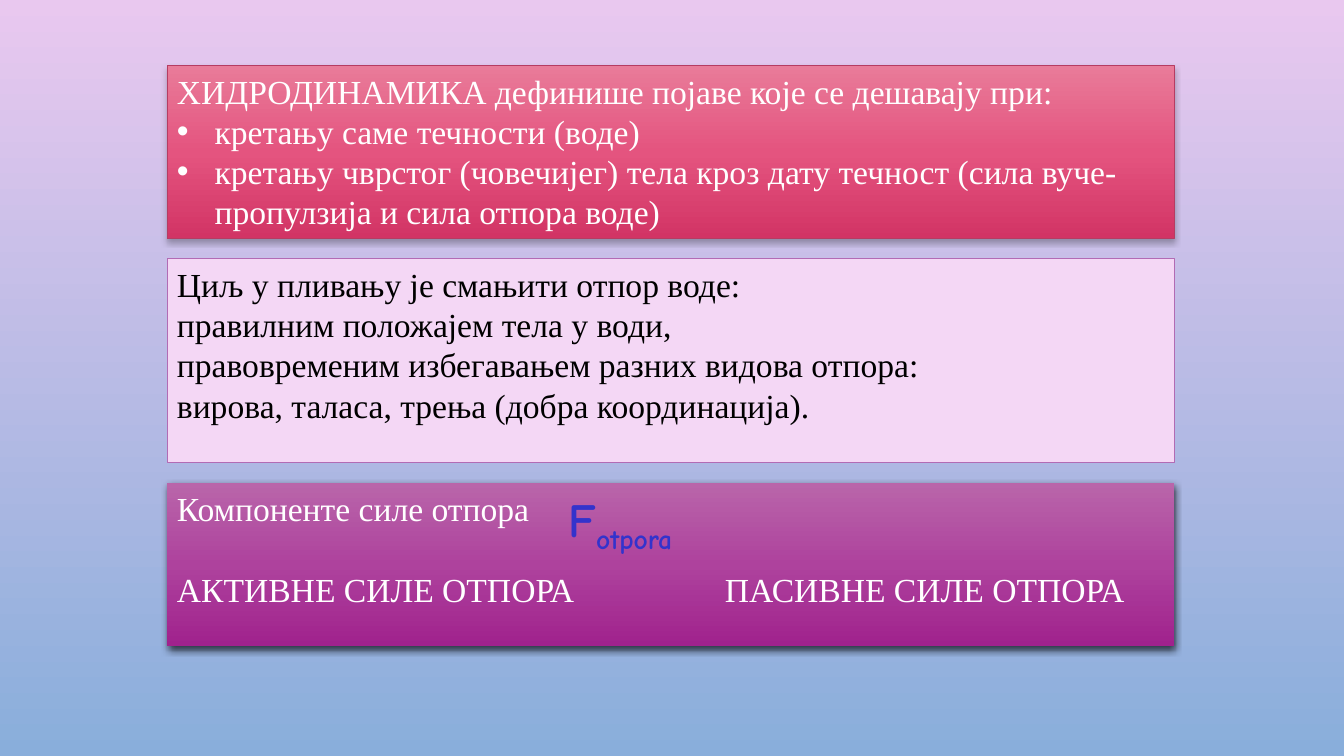
import pptx
import pptx.dml.color
import pptx.enum.shapes
import pptx.enum.text
import pptx.oxml
import pptx.oxml.ns
import pptx.util

Cm = pptx.util.Cm
Pt = pptx.util.Pt
NS = pptx.oxml.ns.nsdecls("a")


def color(hex_code):
    return pptx.dml.color.RGBColor.from_string(hex_code)


def add_text(paragraph, text, font="Times New Roman", size=24, ink="FFFFFF",
             bold=False, baseline=None):
    run = paragraph.add_run()
    run.text = text
    run.font.name = font
    run.font.size = Pt(size)
    run.font.bold = bold
    run.font.color.rgb = color(ink)
    if baseline is not None:
        run.font._element.set("baseline", str(baseline * 1000))


class Page:
    """Holds the slide and the shared style of its panels."""

    LEFT, WIDTH = Cm(4.21), Cm(25.38)
    LINE_PITCH = Pt(28.8)
    BULLET_INDENT = Cm(0.95)

    def __init__(self, slide):
        self.slide = slide

    def gradient(self, owner, fill, stops):
        """Fill top to bottom with evenly spaced colour stops."""
        fill.gradient()
        old = owner.element.xpath(".//a:gradFill")[0]
        step = 100000 // (len(stops) - 1)
        marks = "".join(
            f'<a:gs pos="{i * step}"><a:srgbClr val="{stop}"/></a:gs>'
            for i, stop in enumerate(stops))
        old.getparent().replace(old, pptx.oxml.parse_xml(
            f'<a:gradFill {NS} rotWithShape="1"><a:gsLst>{marks}</a:gsLst>'
            '<a:lin ang="5400000" scaled="0"/></a:gradFill>'))

    def background(self, stops):
        self.gradient(self.slide, self.slide.background.fill, stops)

    def shadow(self, shape, alpha, blur):
        effects = shape.element.spPr.find(pptx.oxml.ns.qn("a:effectLst"))
        effects.append(pptx.oxml.parse_xml(
            f'<a:outerShdw {NS} blurRad="{Pt(blur)}" dist="{Pt(2)}" '
            'dir="5400000" algn="ctr" rotWithShape="0"><a:srgbClr val="000000">'
            f'<a:alpha val="{alpha * 1000}"/></a:srgbClr></a:outerShdw>'))

    def panel(self, top, height, stops, line=None, shadow=None):
        shape = self.slide.shapes.add_shape(
            pptx.enum.shapes.MSO_SHAPE.RECTANGLE,
            self.LEFT, Cm(top), self.WIDTH, Cm(height))
        shape.shadow.inherit = False
        if len(stops) > 1:
            self.gradient(shape, shape.fill, stops)
        else:
            shape.fill.solid()
            shape.fill.fore_color.rgb = color(stops[0])
        if line:
            shape.line.color.rgb = color(line)
            shape.line.width = Pt(0.75)
        else:
            shape.line.fill.background()
        if shadow:
            self.shadow(shape, *shadow)
        shape.text_frame.word_wrap = True
        shape.text_frame.vertical_anchor = pptx.enum.text.MSO_ANCHOR.TOP
        return shape.text_frame

    def add_lines(self, frame, lines, ink="FFFFFF", bullets_from=None, tab=None, gap=0):
        for i, line in enumerate(lines):
            paragraph = frame.paragraphs[0] if i == 0 else frame.add_paragraph()
            props = paragraph._p.get_or_add_pPr()
            if bullets_from is not None and i >= bullets_from:
                props.set("marL", str(self.BULLET_INDENT))
                props.set("indent", str(-self.BULLET_INDENT))
                props.append(pptx.oxml.parse_xml(
                    f'<a:buFont {NS} typeface="Arial"/>'))
                props.append(pptx.oxml.parse_xml(f'<a:buChar {NS} char="•"/>'))
            if tab:
                props.append(pptx.oxml.parse_xml(
                    f'<a:tabLst {NS}><a:tab pos="{Cm(tab)}" algn="l"/></a:tabLst>'))
            paragraph.alignment = pptx.enum.text.PP_ALIGN.LEFT
            paragraph.line_spacing = self.LINE_PITCH
            if i and gap:
                paragraph.space_before = gap
            add_text(paragraph, line, ink=ink)

    def force_symbol(self, left, top, width, height, symbol, index):
        frame = self.slide.shapes.add_textbox(
            Cm(left), Cm(top), Cm(width), Cm(height)).text_frame
        frame.word_wrap = True
        paragraph = frame.paragraphs[0]
        paragraph.alignment = pptx.enum.text.PP_ALIGN.CENTER
        style = dict(font="Comic Neue", size=34, ink="3333CC", bold=True)
        add_text(paragraph, symbol, **style)
        add_text(paragraph, index, baseline=-25, **style)


def main():
    deck = pptx.Presentation()
    deck.slide_width, deck.slide_height = Cm(33.87), Cm(19.05)
    page = Page(deck.slides.add_slide(deck.slide_layouts[6]))
    page.background(["E9C8EF", "89AEDB"])

    # Definition of hydrodynamics
    definition = page.panel(1.65, 4.37, ["E97B99", "E4547F", "D23465"],
                            line="B63C62", shadow=(28, 4))
    page.add_lines(definition, [
        "ХИДРОДИНАМИКА дефинише појаве које се дешавају при:",
        "кретању саме течности (воде)",
        "кретању чврстог (човечијег) тела кроз дату течност "
        "(сила вуче- пропулзија и сила отпора воде)",
    ], bullets_from=1)

    # Goal in swimming
    goal = page.panel(6.52, 5.13, ["F4D7F5"], line="B26BB4")
    page.add_lines(goal, [
        "Циљ у пливању је смањити отпор воде:",
        "правилним положајем тела у води,",
        "правовременим избегавањем разних видова отпора:",
        "вирова, таласа, трења (добра координација).",
    ], ink="000000")

    # Components of the drag force
    components = page.panel(12.18, 4.11, ["B965AA", "AE429D", "A0228D"],
                            shadow=(69, 5))
    page.add_lines(components, [
        "Компоненте силе отпора",
        "АКТИВНЕ СИЛЕ ОТПОРА\tПАСИВНЕ СИЛЕ ОТПОРА",
    ], tab=13.81, gap=page.LINE_PITCH)
    page.force_symbol(13.77, 12.22, 3.73, 1.7, "F", "otpora")

    deck.save("out.pptx")


if __name__ == "__main__":
    main()
